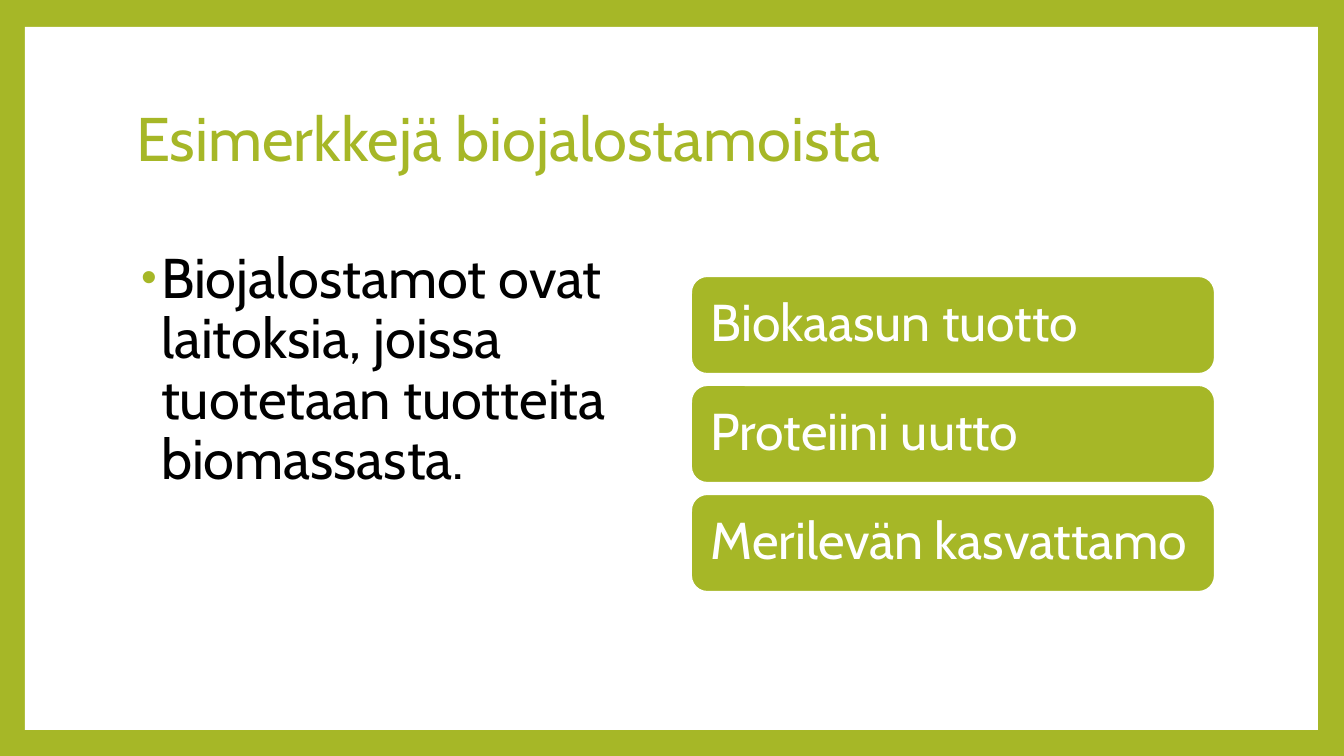
from lxml.etree import SubElement
from pptx import Presentation
from pptx.dml.color import RGBColor
from pptx.enum.shapes import MSO_SHAPE
from pptx.enum.text import MSO_ANCHOR, MSO_AUTO_SIZE, PP_ALIGN
from pptx.oxml.ns import qn
from pptx.util import Pt

TITLE = "Esimerkkejä biojalostamoista"
BODY = "Biojalostamot ovat laitoksia, joissa tuotetaan tuotteita biomassasta."
PLANTS = ["Biokaasun tuotto", "Proteiini uutto", "Merilevän kasvattamo"]

FONT = "Cabin"
GREEN = RGBColor(0xA6, 0xB7, 0x27)
WHITE = RGBColor(0xFF, 0xFF, 0xFF)
BLACK = RGBColor(0, 0, 0)

SIZE = (1344, 756)
PANEL = (25, 27, 1293, 703)
HEAD = (126, 67, 1089, 149)
LIST = (126, 245, 524, 425)
CARD = (691, 276, 524, 98)
STEP = 109
PAD = 15


def emu(px):
    """Turn px into EMU."""
    return round(px * 914400 / 100.8)


def place(shape, box):
    """Set the place and size of a shape."""
    shape.left, shape.top, shape.width, shape.height = map(emu, box)


def block(slide, kind, box, color):
    """Add a flat filled shape."""
    shape = slide.shapes.add_shape(kind, *map(emu, box))
    shape.shadow.inherit = False
    shape.fill.solid()
    shape.fill.fore_color.rgb = color
    shape.line.fill.background()
    return shape


def write(shape, text, size, color, anchor):
    """Write one left-aligned paragraph into a shape."""
    frame = shape.text_frame
    frame.text = text
    frame.word_wrap = True
    frame.auto_size = MSO_AUTO_SIZE.NONE
    frame.vertical_anchor = anchor
    para = frame.paragraphs[0]
    para.alignment = PP_ALIGN.LEFT
    para.line_spacing = 0.9
    para.space_before = Pt(0)
    para.font.name = FONT
    para.font.size = Pt(size)
    para.font.color.rgb = color
    return para


def bullet(para):
    """Give a paragraph a hanging green bullet."""
    props = para._p.get_or_add_pPr()
    props.set("marL", str(emu(25)))
    props.set("indent", str(-emu(20)))
    last = props.find(qn("a:defRPr"))
    tint = SubElement(props, qn("a:buClr"))
    SubElement(tint, qn("a:srgbClr"), val=str(GREEN))
    SubElement(props, qn("a:buSzPct"), val="80000")
    SubElement(props, qn("a:buFont"), typeface="Arial")
    SubElement(props, qn("a:buChar"), char="•")
    props.append(last)


def main():
    """Build the slide and save it."""
    deck = Presentation()
    deck.slide_width, deck.slide_height = map(emu, SIZE)
    slide = deck.slides.add_slide(deck.slide_layouts[1])
    slide.background.fill.solid()
    slide.background.fill.fore_color.rgb = GREEN

    panel = block(slide, MSO_SHAPE.RECTANGLE, PANEL, WHITE)
    slide.shapes.element.insert(2, panel.element)

    title, body = slide.placeholders
    place(title, HEAD)
    write(title, TITLE, 44, GREEN, MSO_ANCHOR.MIDDLE)
    place(body, LIST)
    para = write(body, BODY, 40, BLACK, MSO_ANCHOR.TOP)
    para.space_before = Pt(14)
    bullet(para)

    left, top, width, height = CARD
    for row, plant in enumerate(PLANTS):
        box = (left, top + row * STEP, width, height)
        card = block(slide, MSO_SHAPE.ROUNDED_RECTANGLE, box, GREEN)
        card.line.color.rgb = WHITE
        card.line.width = Pt(1.5)
        frame = card.text_frame
        frame.margin_left = frame.margin_right = emu(PAD)
        write(card, plant, 37, WHITE, MSO_ANCHOR.MIDDLE)

    deck.save("out.pptx")


if __name__ == "__main__":
    main()
